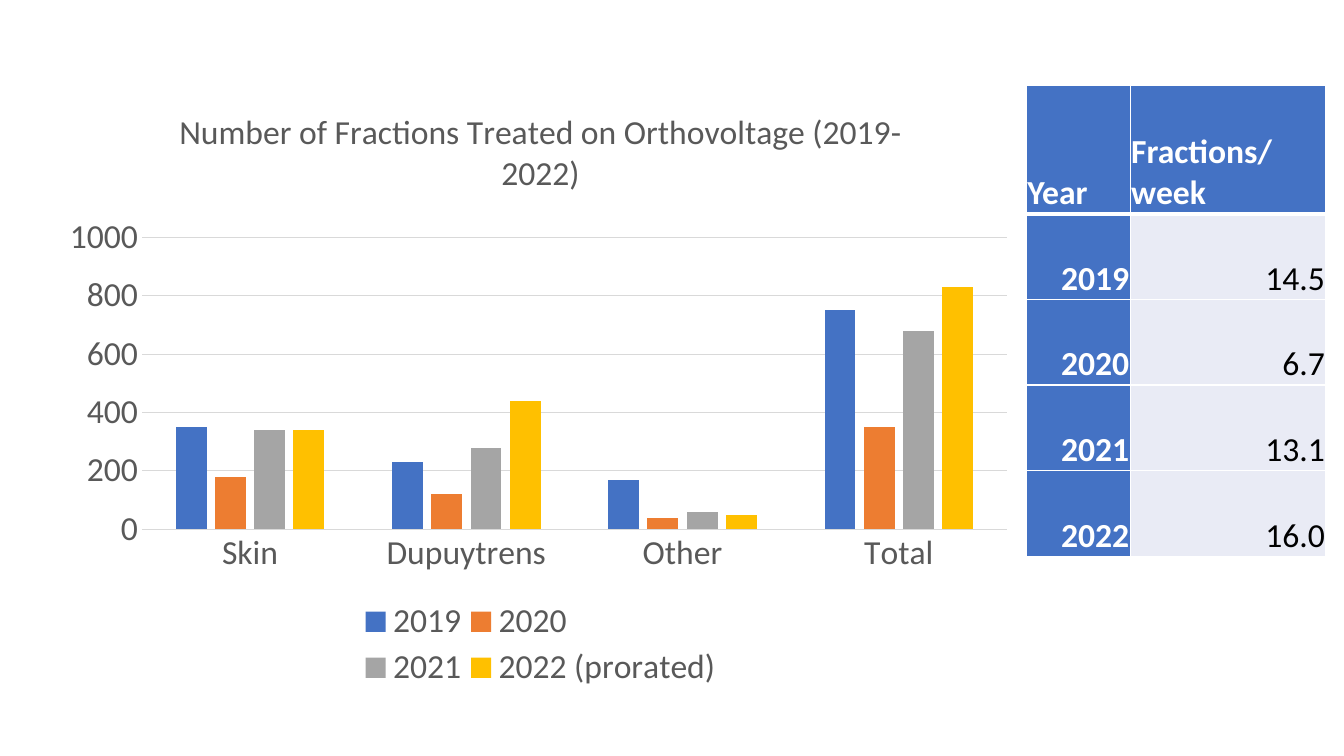
"""Build a slide with a chart of yearly fractions beside a weekly table."""
import dataclasses
import typing

import lxml.etree
import pptx
import pptx.chart.data
import pptx.dml.color
import pptx.enum.chart
import pptx.enum.text
import pptx.oxml.ns
import pptx.util

Inches = pptx.util.Inches
Pt = pptx.util.Pt
qn = pptx.oxml.ns.qn
Align = pptx.enum.text.PP_ALIGN

FONT = "Calibri"
SIZE = 24
COLORS = {
    "white": "FFFFFF", "black": "000000", "gray": "595959", "grid": "D9D9D9",
    "blue": "4472C4", "orange": "ED7D31", "silver": "A5A5A5",
    "gold": "FFC000", "pale": "E9EBF5",
}


@dataclasses.dataclass
class Series:
    name: str
    color: str
    values: tuple[int, ...]


@dataclasses.dataclass
class Row:
    year: str
    rate: str
    height: float = 0.85
    header: bool = False


GROUPS = ("Skin", "Dupuytrens", "Other", "Total")
SERIES = (
    Series("2019", "blue", (350, 230, 170, 750)),
    Series("2020", "orange", (180, 120, 40, 350)),
    Series("2021", "silver", (340, 280, 60, 680)),
    Series("2022 (prorated)", "gold", (340, 440, 50, 830)),
)
ROWS = (
    Row("Year", "Fractions/ week", height=1.27, header=True),
    Row("2019", "14.5"),
    Row("2020", "6.7"),
    Row("2021", "13.1"),
    Row("2022", "16.0"),
)
WIDTHS = (1.03, 1.94)


def shade(name: str) -> pptx.dml.color.RGBColor:
    return pptx.dml.color.RGBColor.from_string(COLORS[name])


def style(font: typing.Any, color: str, bold: bool = False) -> None:
    font.name = FONT
    font.size = Pt(SIZE)
    font.bold = bold
    font.color.rgb = shade(color)


def write(frame: typing.Any, text: str, *, color: str, bold: bool = False,
          align: Align = Align.LEFT) -> None:
    line = frame.paragraphs[0]
    line.alignment = align
    run = line.add_run()
    run.text = text
    style(run.font, color, bold)


def edge(cell: typing.Any, side: str, width: float) -> None:
    props = cell._tc.get_or_add_tcPr()
    line = lxml.etree.Element(qn(f"a:{side}"), w=str(Pt(width)))
    fill = lxml.etree.SubElement(line, qn("a:solidFill"))
    lxml.etree.SubElement(fill, qn("a:srgbClr"), val=COLORS["white"])
    props.insert(("lnL", "lnR", "lnT", "lnB").index(side), line)


def place(host: typing.Any, index: int, inner: bool = False,
          **box: float) -> None:
    for old in host.findall(qn("c:layout")):
        host.remove(old)
    layout = lxml.etree.Element(qn("c:layout"))
    manual = lxml.etree.SubElement(layout, qn("c:manualLayout"))
    if inner:
        lxml.etree.SubElement(manual, qn("c:layoutTarget"), val="inner")
    for key in ("x", "y"):
        lxml.etree.SubElement(manual, qn(f"c:{key}Mode"), val="edge")
    for key, value in box.items():
        lxml.etree.SubElement(manual, qn(f"c:{key}"), val=str(value))
    host.insert(index, layout)


def draw_chart(slide: typing.Any) -> None:
    data = pptx.chart.data.CategoryChartData()
    data.categories = GROUPS
    for item in SERIES:
        data.add_series(item.name, item.values)
    chart = slide.shapes.add_chart(
        pptx.enum.chart.XL_CHART_TYPE.COLUMN_CLUSTERED, Inches(0.54),
        Inches(0.85), Inches(9.64), Inches(6.03), data).chart
    style(chart.font, "gray")
    chart.has_title = True
    write(chart.chart_title.text_frame,
          "Number of Fractions Treated on Orthovoltage (2019-2022)",
          color="gray", align=Align.CENTER)
    chart.chart_title.include_in_layout = False

    plot = chart.plots[0]
    plot.gap_width = 219
    plot.overlap = -27
    plot.vary_by_categories = False
    for series, item in zip(plot.series, SERIES):
        series.format.fill.solid()
        series.format.fill.fore_color.rgb = shade(item.color)

    values = chart.value_axis
    values.minimum_scale = 0
    values.maximum_scale = 1000
    values.major_unit = 200
    values.format.line.fill.background()
    for axis in (values, chart.category_axis):
        axis.major_tick_mark = pptx.enum.chart.XL_TICK_MARK.NONE
        style(axis.tick_labels.font, "gray")
    for rule in (values.major_gridlines, chart.category_axis):
        rule.format.line.width = Pt(0.75)
        rule.format.line.color.rgb = shade("grid")

    chart.has_legend = True
    chart.legend.position = pptx.enum.chart.XL_LEGEND_POSITION.BOTTOM
    chart.legend.include_in_layout = False
    style(chart.legend.font, "gray")
    root = chart._chartSpace.find(qn("c:chart"))
    place(root.find(qn("c:plotArea")), 0, inner=True,
          x=0.09, y=0.25, w=0.89, h=0.48)
    place(root.find(qn("c:legend")), 1, x=0.31, y=0.84, w=0.38, h=0.16)


def draw_table(slide: typing.Any) -> None:
    table = slide.shapes.add_table(
        len(ROWS), len(WIDTHS), Inches(10.18), Inches(0.85),
        Inches(sum(WIDTHS)), Inches(sum(row.height for row in ROWS))).table
    for column, width in zip(table.columns, WIDTHS):
        column.width = Inches(width)
    for index, row in enumerate(ROWS):
        table.rows[index].height = Inches(row.height)
        for col, text in enumerate((row.year, row.rate)):
            cell = table.cell(index, col)
            strong = row.header or col == 0
            cell.margin_left = cell.margin_right = Inches(0.01)
            cell.margin_top, cell.margin_bottom = Inches(0.01), 0
            cell.vertical_anchor = pptx.enum.text.MSO_ANCHOR.BOTTOM
            cell.fill.solid()
            cell.fill.fore_color.rgb = shade("blue" if strong else "pale")
            write(cell.text_frame, text, bold=strong,
                  color="white" if strong else "black",
                  align=Align.LEFT if row.header else Align.RIGHT)
            for side in ("lnL", "lnR", "lnT", "lnB"):
                thick = (side == "lnB" and row.header
                         or side == "lnT" and index == 1)
                edge(cell, side, 3 if thick else 1)


def main() -> None:
    deck = pptx.Presentation()
    deck.slide_width = Inches(13.33)
    deck.slide_height = Inches(7.5)
    slide = deck.slides.add_slide(deck.slide_layouts[6])
    draw_table(slide)
    draw_chart(slide)
    deck.save("out.pptx")


if __name__ == "__main__":
    main()
